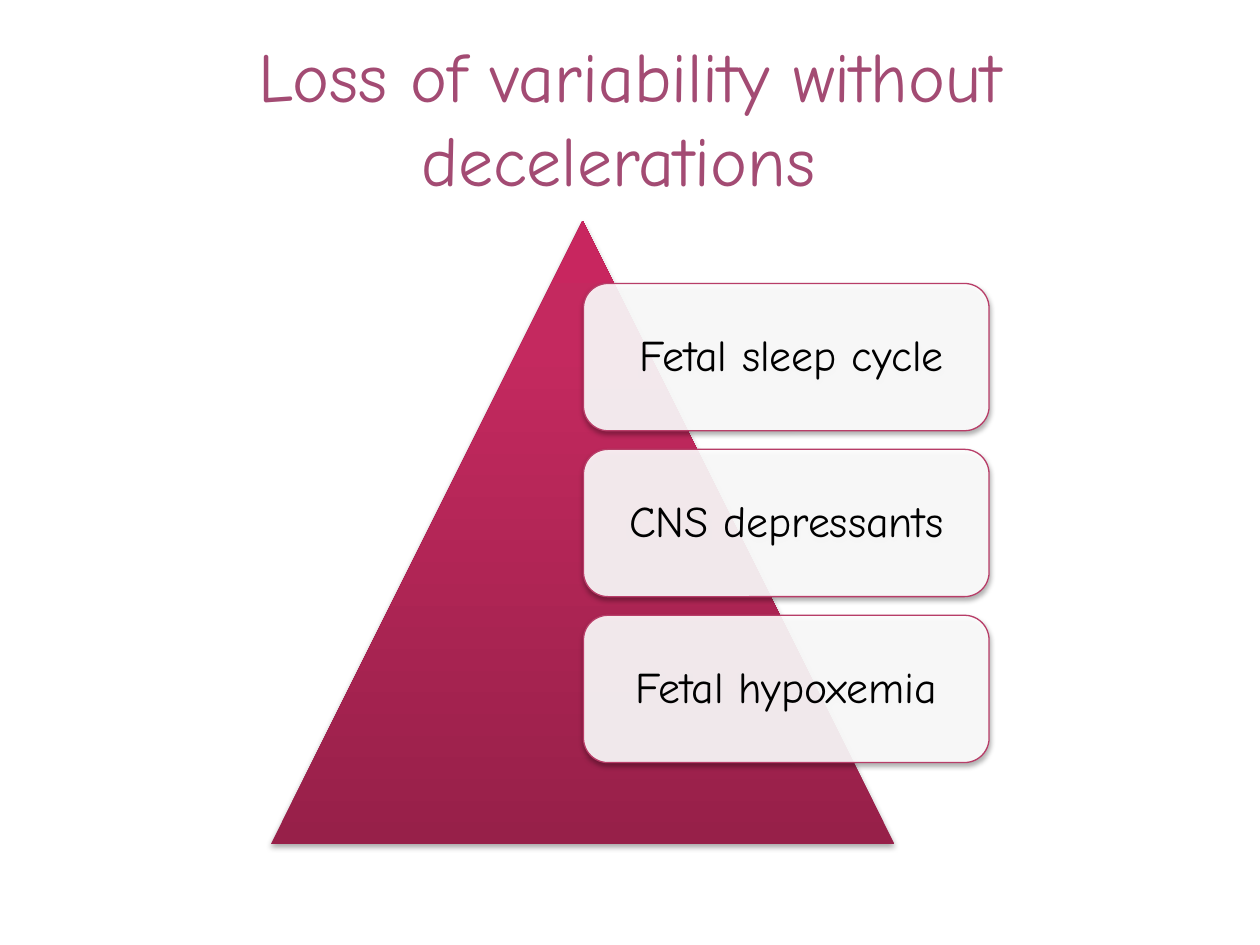
import copy

import pptx
import pptx.dml.color
import pptx.enum.shapes
import pptx.enum.text
import pptx.oxml
import pptx.oxml.ns
import pptx.util

Pt = pptx.util.Pt
SHAPE = pptx.enum.shapes.MSO_SHAPE
qn = pptx.oxml.ns.qn

HUES = {
    "title": "A34B73",
    "text": "000000",
    "card": "FFFFFF",
    "edge": "B83D68",
    "shade": "000000",
    "base": "972049",
    "mid": "C4295F",
    "peak": "C8265F",
}


class Deck:
    """Holds the style and the current slide."""

    def __init__(self, wide, high, font):
        self.file = pptx.Presentation()
        self.file.slide_width, self.file.slide_height = Pt(wide), Pt(high)
        self.slide = self.file.slides.add_slide(self.file.slide_layouts[6])
        self.font = font

    def hue(self, name):
        return pptx.dml.color.RGBColor.from_string(HUES[name])

    def label(self, shape, text, size, hue, inset):
        frame = shape.text_frame
        frame.text = text
        frame.word_wrap = True
        frame.vertical_anchor = pptx.enum.text.MSO_ANCHOR.MIDDLE
        frame.margin_left = frame.margin_right = Pt(inset)
        para = frame.paragraphs[0]
        para.alignment = pptx.enum.text.PP_ALIGN.CENTER
        font = para.runs[0].font
        font.name, font.size = self.font, Pt(size)
        font.color.rgb = self.hue(hue)
        return para

    def shade(self, shape):
        shape.shadow.inherit = False
        glow = shape._element.spPr.find(qn("a:effectLst"))
        glow.append(pptx.oxml.parse_xml(
            f'<a:outerShdw {pptx.oxml.ns.nsdecls("a")} blurRad="{Pt(3.1)}" '
            f'dist="{Pt(1.8)}" dir="5400000" rotWithShape="0">'
            f'<a:srgbClr val="{HUES["shade"]}"><a:alpha val="35000"/>'
            '</a:srgbClr></a:outerShdw>'))

    def shape(self, kind, *box):
        shape = self.slide.shapes.add_shape(kind, *map(Pt, box))
        self.shade(shape)
        return shape

    def title(self, text, *box):
        shape = self.slide.shapes.add_textbox(*map(Pt, box))
        self.label(shape, text, 40, "title", 7.2)

    def peak(self, stops, *box):
        shape = self.shape(SHAPE.ISOSCELES_TRIANGLE, *box)
        shape.line.fill.background()
        shape.fill.gradient()
        shape.fill.gradient_angle = 90
        row = shape._element.spPr.find(qn("a:gradFill")).find(qn("a:gsLst"))
        row.append(copy.deepcopy(row[-1]))
        for stop, (place, name) in zip(shape.fill.gradient_stops, stops):
            stop.position = place
            stop.color.rgb = self.hue(name)

    def card(self, text, *box):
        shape = self.shape(SHAPE.ROUNDED_RECTANGLE, *box)
        shape.fill.solid()
        shape.fill.fore_color.rgb = self.hue("card")
        tint = shape._element.spPr.find(qn("a:solidFill"))[0]
        tint.append(pptx.oxml.parse_xml(
            f'<a:alpha {pptx.oxml.ns.nsdecls("a")} val="90000"/>'))
        shape.line.color.rgb = self.hue("edge")
        shape.line.width = Pt(0.75)
        para = self.label(shape, text, 25, "text", 11.3)
        para.line_spacing = 0.9
        para._p.get_or_add_pPr().set("rtl", "1")


def main():
    deck = Deck(720, 540, "Comic Neue")
    deck.title("Loss of variability without decelerations ", 36, 21.6, 648, 90)
    deck.peak([(0, "base"), (0.8, "mid"), (1, "peak")],
              154.8, 126, 356.4, 356.4)
    causes = ["Fetal sleep cycle ", "CNS depressants", "Fetal hypoxemia"]
    for step, cause in enumerate(causes):
        deck.card(cause, 333.4, 162 + 94.8 * step, 231.8, 84.2)
    deck.file.save("out.pptx")


if __name__ == "__main__":
    main()
